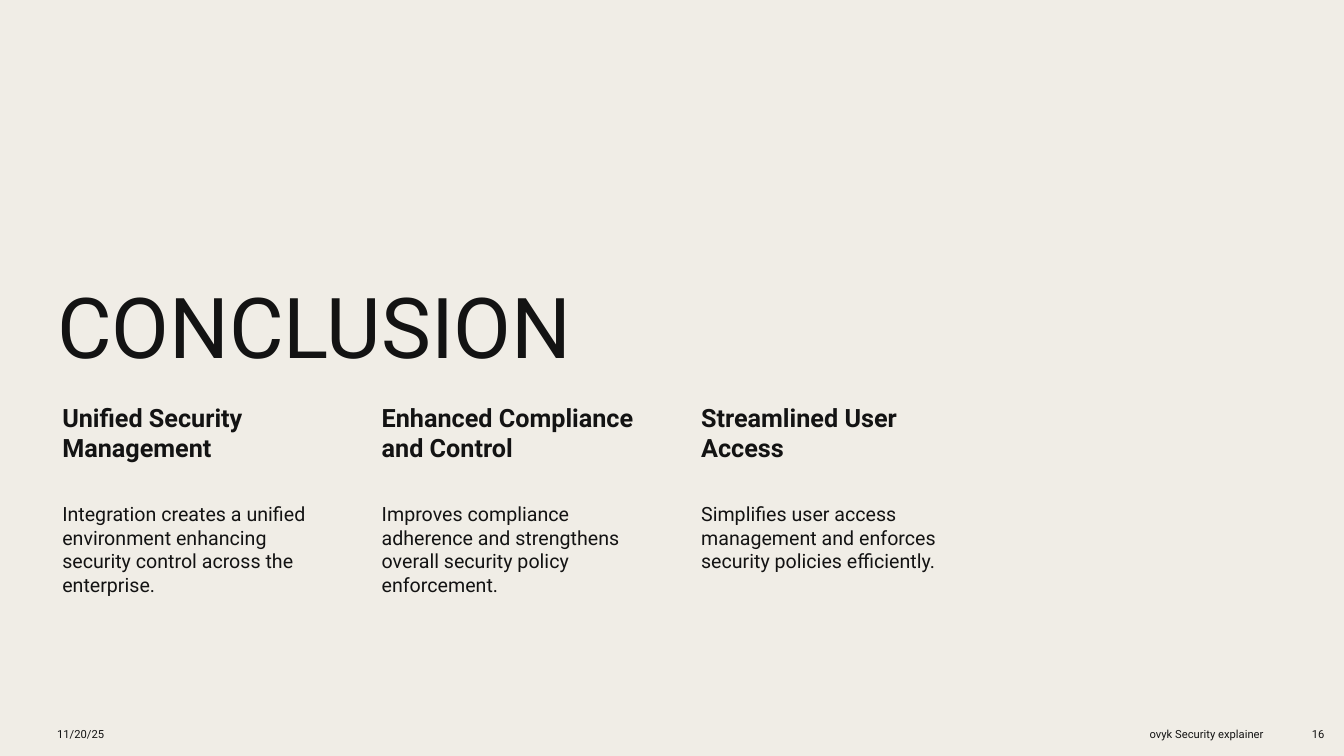
import dataclasses

import pptx
import pptx.dml.color
import pptx.enum.text
import pptx.slide
import pptx.util

Cm = pptx.util.Cm
ALIGN = pptx.enum.text.PP_ALIGN
ANCHOR = pptx.enum.text.MSO_ANCHOR


@dataclasses.dataclass(frozen=True)
class Theme:
    """Colours, font and type sizes in points."""

    paper: str = "F0EDE6"
    ink: str = "131313"
    font: str = "Roboto"
    title: int = 60
    heading: int = 18
    body: int = 14
    footer: int = 8


@dataclasses.dataclass(frozen=True)
class Label:
    """A text box with its place and insets in centimetres."""

    text: str
    left: float
    top: float
    width: float
    height: float
    size: int
    bold: bool = False
    align: ALIGN = ALIGN.LEFT
    anchor: ANCHOR = ANCHOR.TOP
    inset_left: float = 0.25
    inset_right: float = 0.25
    inset_y: float = 0.13
    line_spacing: float = 1.0
    space_after: float = 0


@dataclasses.dataclass(frozen=True)
class Point:
    """A conclusion with its heading and explanation."""

    heading: str
    body: str


THEME = Theme()
MARGIN = 1.19
COLUMN_WIDTH = 7.32
COLUMN_PITCH = 8.05
FOOTER_TOP = 18.03
FOOTER_HEIGHT = 0.94

POINTS = [
    Point("Unified Security Management",
          "Integration creates a unified environment enhancing security control across the enterprise."),
    Point("Enhanced Compliance and Control",
          "Improves compliance adherence and strengthens overall security policy enforcement."),
    Point("Streamlined User Access",
          "Simplifies user access management and enforces security policies efficiently."),
]


def add_label(s: pptx.slide.Slide, label: Label) -> None:
    """Draw one text box."""
    box = s.shapes.add_textbox(Cm(label.left), Cm(label.top), Cm(label.width), Cm(label.height))
    tf = box.text_frame
    tf.word_wrap = True
    tf.vertical_anchor = label.anchor
    tf.margin_left, tf.margin_right = Cm(label.inset_left), Cm(label.inset_right)
    tf.margin_top = tf.margin_bottom = Cm(label.inset_y)
    p = tf.paragraphs[0]
    p.text = label.text
    p.alignment = label.align
    p.line_spacing = label.line_spacing
    p.space_after = pptx.util.Pt(label.space_after)
    p.font.name = THEME.font
    p.font.size = pptx.util.Pt(label.size)
    p.font.bold = label.bold
    p.font.color.rgb = pptx.dml.color.RGBColor.from_string(THEME.ink)


def add_point(s: pptx.slide.Slide, column: int, point: Point) -> None:
    """Draw the heading and body of one column."""
    left = MARGIN + column * COLUMN_PITCH
    add_label(s, Label(point.heading, left, 10.06, COLUMN_WIDTH, 2.54, THEME.heading, bold=True,
                       inset_left=0.38, inset_right=0.08, inset_y=0.08, space_after=6.3))
    add_label(s, Label(point.body, left, 12.6, COLUMN_WIDTH, 2.51, THEME.body,
                       inset_left=0.38, inset_right=0.05, inset_y=0.05, space_after=4.9))


def add_footer(s: pptx.slide.Slide, text: str, left: float, width: float, align: ALIGN) -> None:
    """Draw one footer item."""
    add_label(s, Label(text, left, FOOTER_TOP, width, FOOTER_HEIGHT, THEME.footer,
                       align=align, anchor=ANCHOR.MIDDLE, space_after=6))


def main() -> None:
    """Build and save the conclusion slide."""
    prs = pptx.Presentation()
    prs.slide_width, prs.slide_height = Cm(33.87), Cm(19.05)
    s = prs.slides.add_slide(prs.slide_layouts[6])
    s.background.fill.solid()
    s.background.fill.fore_color.rgb = pptx.dml.color.RGBColor.from_string(THEME.paper)

    add_label(s, Label("CONCLUSION", MARGIN, 4.52, 23.42, 5.11, THEME.title,
                       anchor=ANCHOR.BOTTOM, line_spacing=0.9))
    for column, point in enumerate(POINTS):
        add_point(s, column, point)
    add_footer(s, "11/20/25", MARGIN, 7.9, ALIGN.LEFT)
    add_footer(s, "ovyk Security explainer", 24.71, 7.39, ALIGN.RIGHT)
    add_footer(s, "16", 32.36, 1.27, ALIGN.RIGHT)
    prs.save("out.pptx")


if __name__ == "__main__":
    main()
